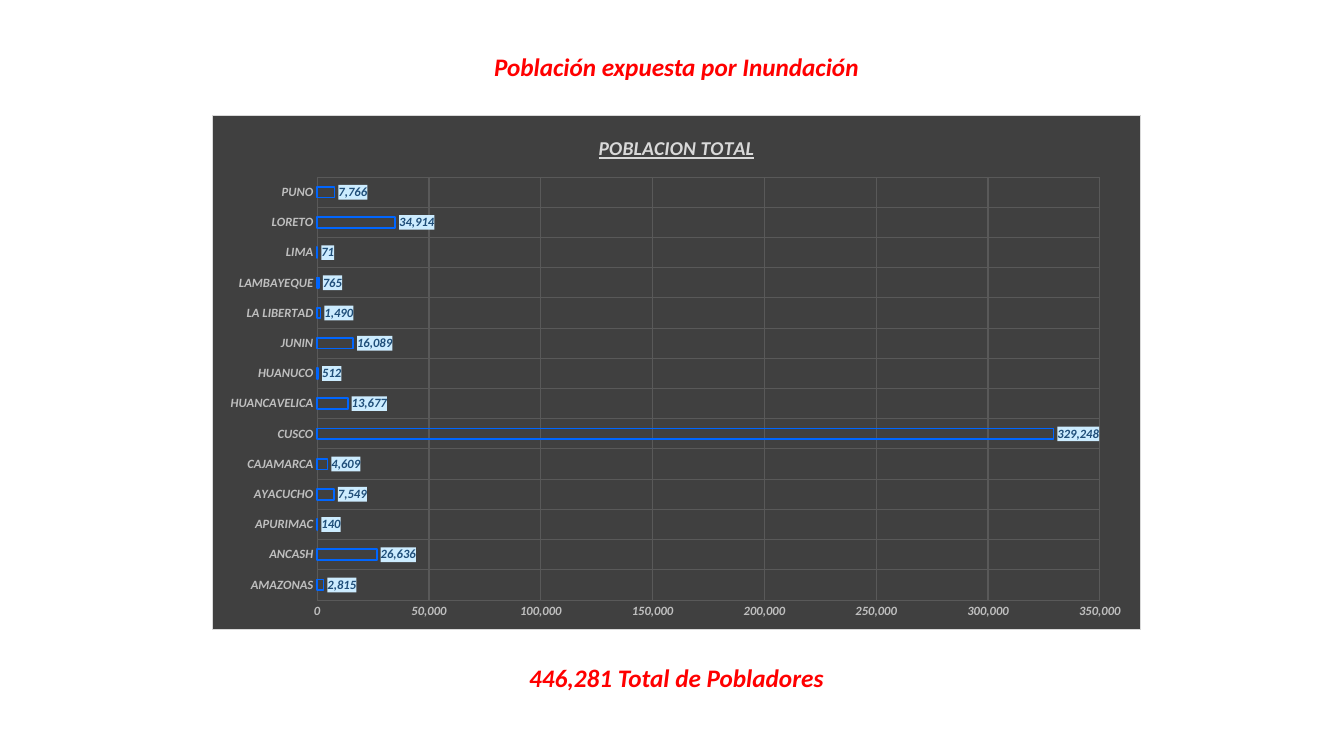
from lxml import etree
from pptx import Presentation
from pptx.chart.data import CategoryChartData
from pptx.dml.color import RGBColor
from pptx.enum.chart import XL_CHART_TYPE as Chart, XL_LABEL_POSITION as Pos, XL_TICK_MARK as Tick
from pptx.enum.text import MSO_ANCHOR as Anchor, PP_ALIGN as Align
from pptx.oxml import parse_xml
from pptx.oxml.ns import nsdecls, qn
from pptx.util import Inches, Pt

TITLE = "Población expuesta por Inundación"
TOTAL = "446,281 Total de Pobladores"
CHART_TITLE = "POBLACION TOTAL"
POPULATION = {
    "AMAZONAS": 2815, "ANCASH": 26636, "APURIMAC": 140, "AYACUCHO": 7549,
    "CAJAMARCA": 4609, "CUSCO": 329248, "HUANCAVELICA": 13677,
    "HUANUCO": 512, "JUNIN": 16089, "LA LIBERTAD": 1490,
    "LAMBAYEQUE": 765, "LIMA": 71, "LORETO": 34914, "PUNO": 7766,
}
FONT, NUMBER = "Calibri", "#,##0"
RED, DARK, GRID, GREY, PALE = "FF0000", "404040", "595959", "BFBFBF", "D9D9D9"
BLUE, NAVY, SKY = "0066FF", "1F4E79", "CCECFF"
CHART_BOX = (2.1, 1.14, 9.22, 5.11)
PLOT_SHARES = {"x": 0.113, "y": 0.12, "w": 0.843, "h": 0.823}


def rgb(value):
    return RGBColor.from_string(value)


def style_font(font, size, color):
    font.name, font.size, font.bold, font.italic = FONT, Pt(size), True, True
    font.color.rgb = rgb(color)


def style_line(line, color, width):
    line.color.rgb, line.width = rgb(color), Pt(width)


def write_caption(sp, text, box):
    sp.left, sp.top, sp.width, sp.height = map(Inches, box)
    tf = sp.text_frame
    tf.text, tf.word_wrap, tf.vertical_anchor = text, True, Anchor.MIDDLE
    p = tf.paragraphs[0]
    p.alignment = Align.CENTER
    style_font(p.font, 18, RED)


def shape_props(fill, border=None):
    """Chart fill and border as a c:spPr element."""
    sp_pr = parse_xml(f'<c:spPr {nsdecls("c", "a")}><a:solidFill>'
                      f'<a:srgbClr val="{fill}"/></a:solidFill></c:spPr>')
    if border:
        ln = etree.SubElement(sp_pr, qn("a:ln"), w=str(Pt(0.75)))
        solid = etree.SubElement(ln, qn("a:solidFill"))
        etree.SubElement(solid, qn("a:srgbClr"), val=border)
    return sp_pr


def place_plot(chart):
    plot_area = chart.element.find(".//" + qn("c:plotArea"))
    for old in plot_area.findall(qn("c:layout")):
        plot_area.remove(old)
    layout = etree.Element(qn("c:layout"))
    manual = etree.SubElement(layout, qn("c:manualLayout"))
    settings = {"layoutTarget": "inner", "xMode": "edge", "yMode": "edge", **PLOT_SHARES}
    for tag, value in settings.items():
        etree.SubElement(manual, qn("c:" + tag), val=str(value))
    plot_area.insert(0, layout)


def add_population_chart(s):
    data = CategoryChartData(number_format=NUMBER)
    data.categories = list(POPULATION)
    data.add_series(CHART_TITLE, list(POPULATION.values()))
    chart = s.shapes.add_chart(Chart.BAR_CLUSTERED, *map(Inches, CHART_BOX), data).chart
    chart.has_legend = False
    chart.font.name, chart.font.size = FONT, Pt(10)
    chart.element.find(qn("c:txPr")).addprevious(shape_props(DARK, PALE))
    place_plot(chart)

    p = chart.chart_title.text_frame.paragraphs[0]
    p.text = CHART_TITLE
    style_font(p.font, 14, PALE)
    p.font.underline = True
    chart.chart_title.include_in_layout = False

    for axis in (chart.category_axis, chart.value_axis):
        axis.major_tick_mark = axis.minor_tick_mark = Tick.NONE
        axis.has_major_gridlines = True
        style_line(axis.major_gridlines.format.line, GRID, 0.75)
        axis.format.line.fill.background()
        style_font(axis.tick_labels.font, 9, GREY)
    axis = chart.value_axis
    axis.minimum_scale, axis.maximum_scale, axis.major_unit = 0, 350000, 50000
    axis.tick_labels.number_format = NUMBER
    axis.tick_labels.number_format_is_linked = False

    plot = chart.plots[0]
    plot.gap_width, plot.overlap, plot.vary_by_categories = 182, -50, False
    bars = plot.series[0]
    bars.format.fill.background()
    style_line(bars.format.line, BLUE, 1.25)
    labels = bars.data_labels
    labels.show_value, labels.position = True, Pos.OUTSIDE_END
    labels.number_format, labels.number_format_is_linked = NUMBER, False
    style_font(labels.font, 9, NAVY)
    label_text = bars.format.line and plot.series[0].data_labels.font
    style_font(label_text, 9, NAVY)
    chart.element.find(f".//{qn('c:dLbls')}/{qn('c:txPr')}").addprevious(shape_props(SKY))


def main():
    prs = Presentation()
    prs.slide_width, prs.slide_height = Inches(13.33), Inches(7.5)
    s = prs.slides.add_slide(prs.slide_layouts[5])
    write_caption(s.shapes.title, TITLE, (4.78, 0.46, 3.86, 0.4))
    total_box = (5.03, 6.52, 3.36, 0.4)
    write_caption(s.shapes.add_textbox(*map(Inches, total_box)), TOTAL, total_box)
    add_population_chart(s)
    prs.save("out.pptx")


if __name__ == "__main__":
    main()
